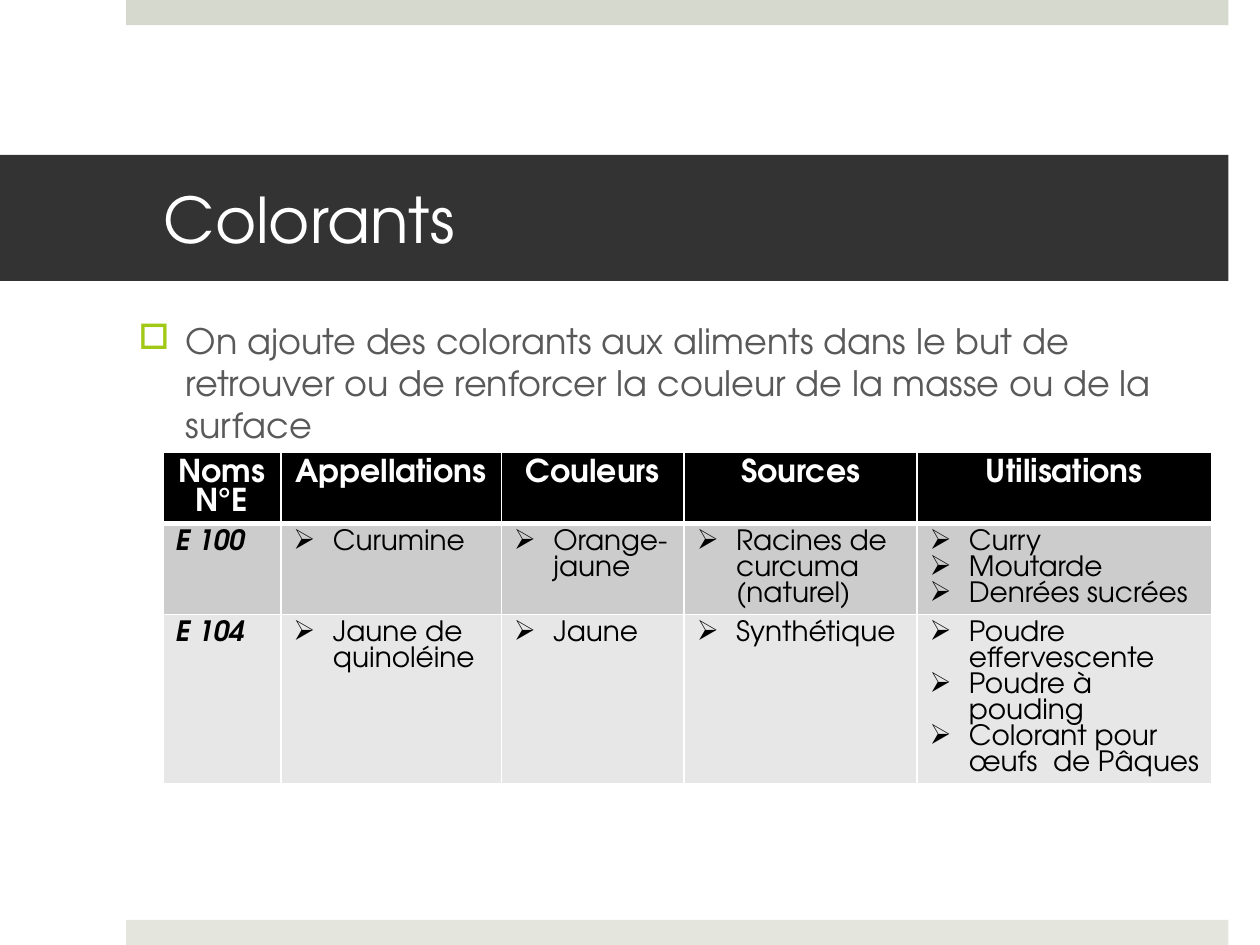
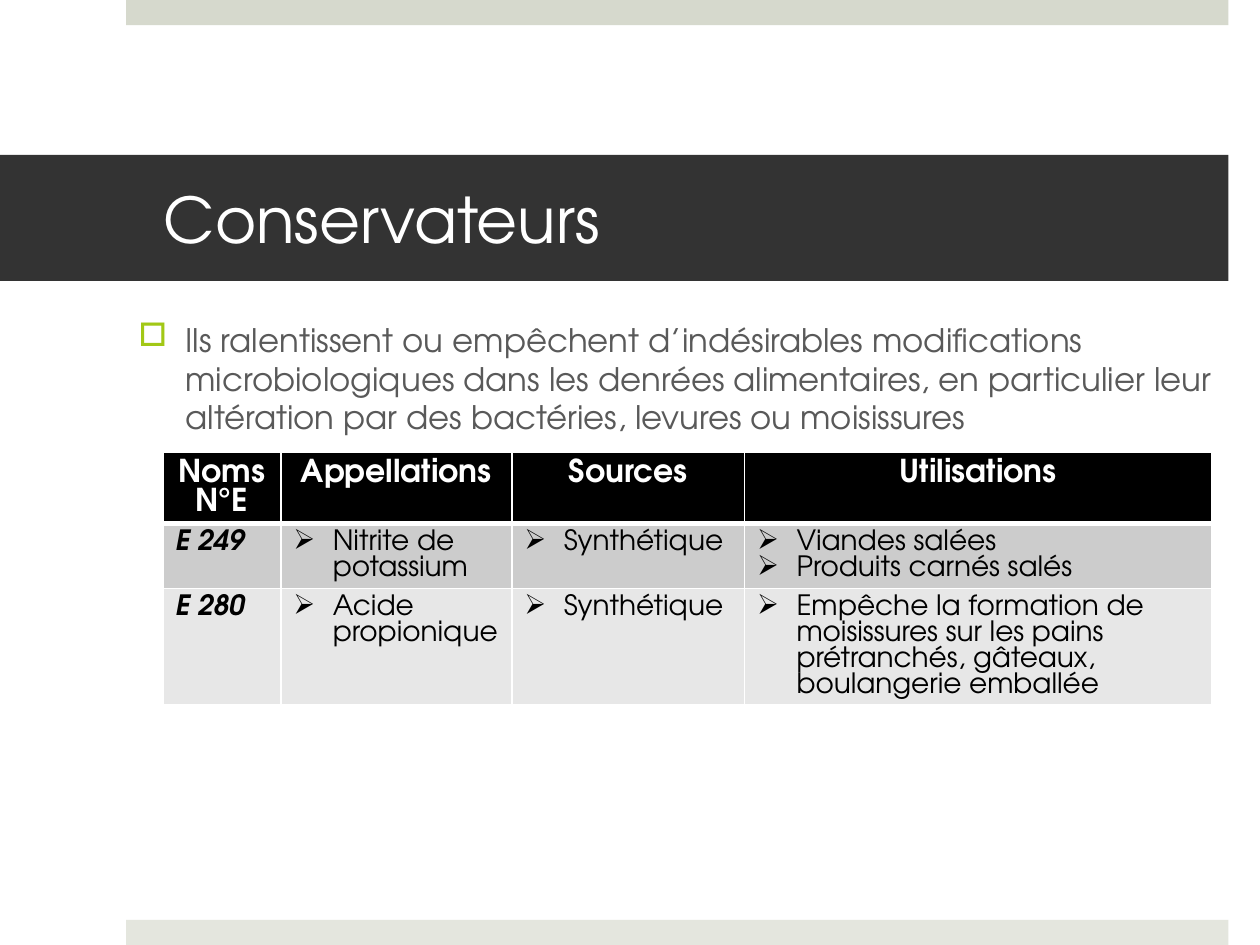
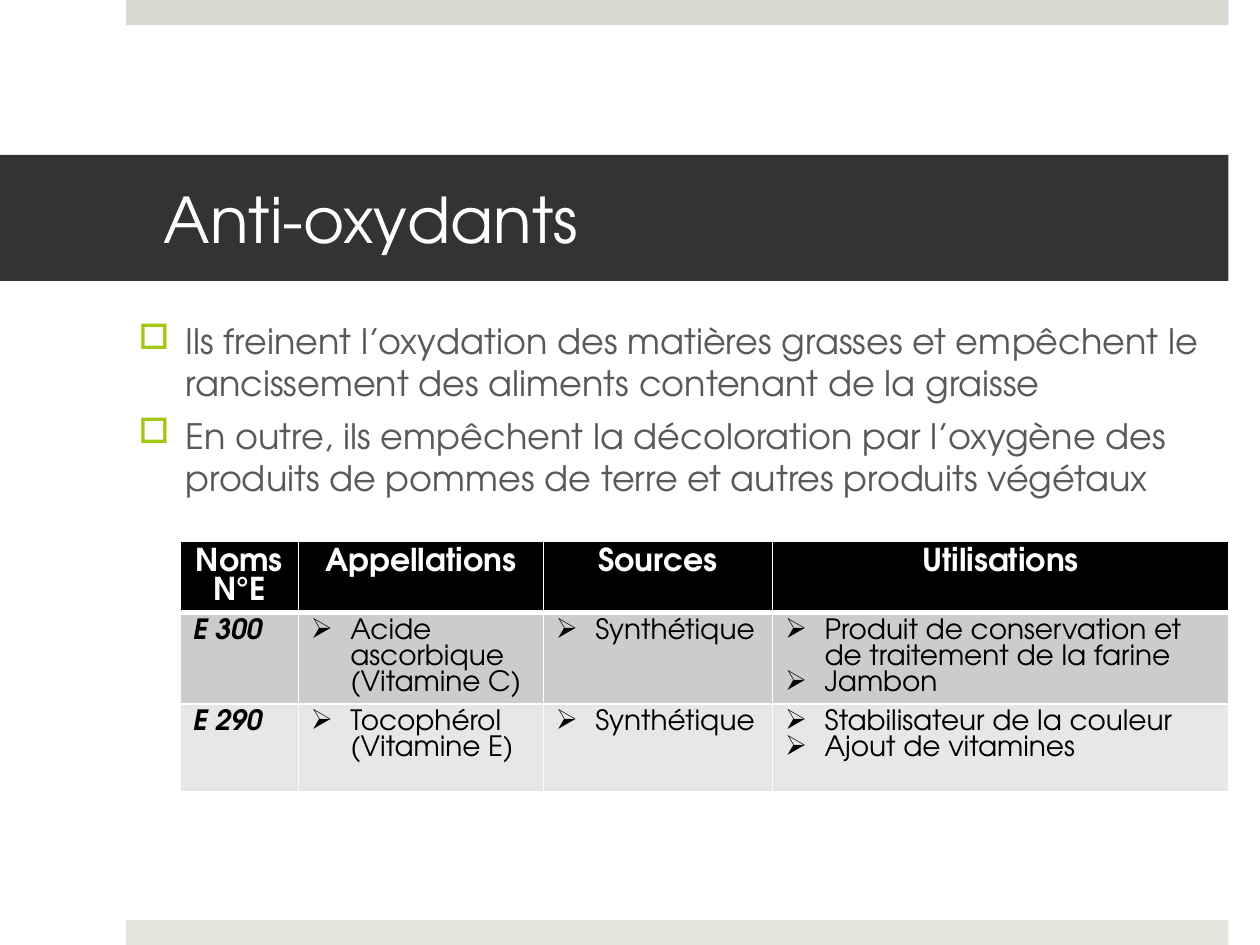
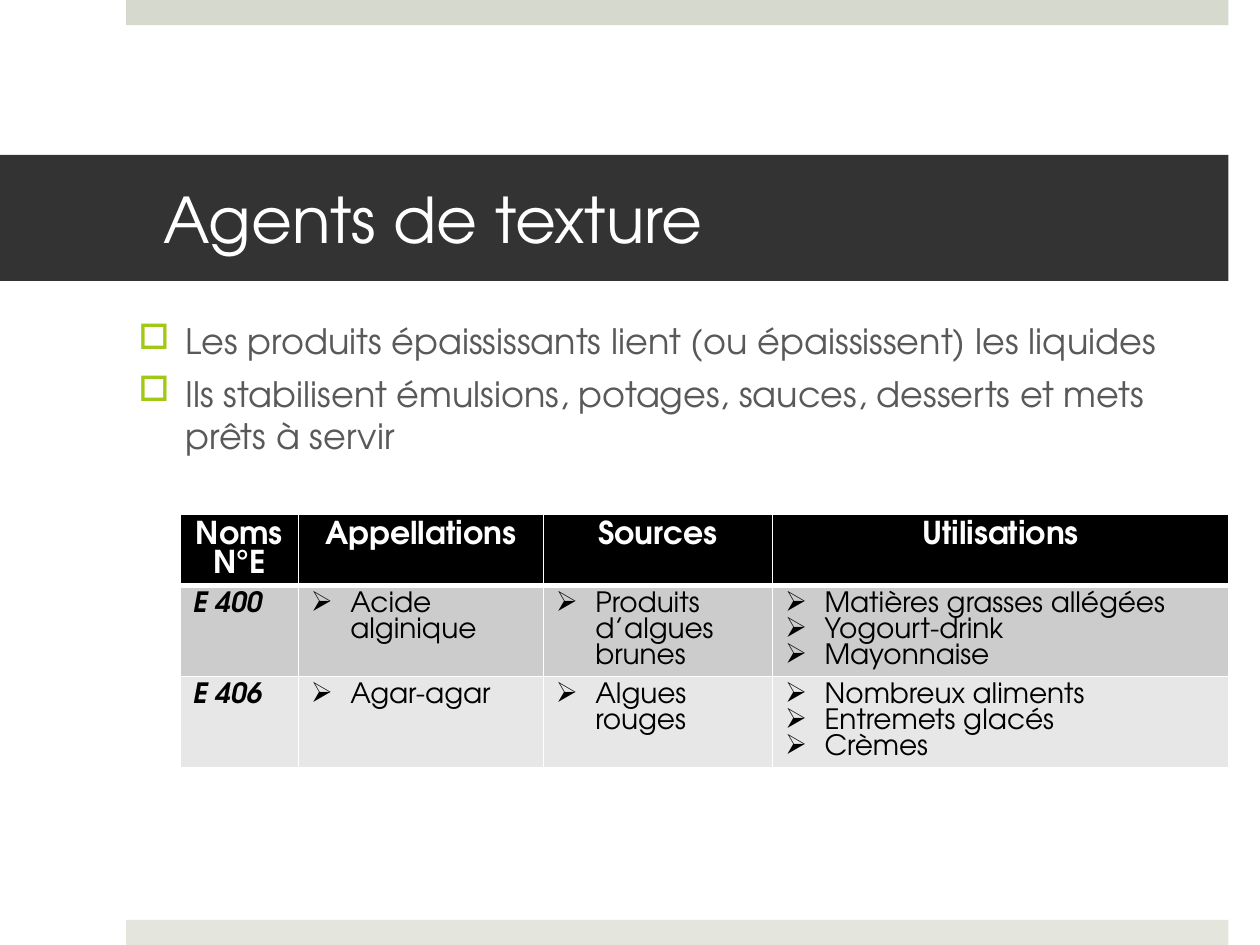
import pptx
import pptx.util
import pptx.dml.color
import pptx.enum.shapes
import pptx.enum.text
import pptx.oxml.ns
import lxml.etree

Pt = pptx.util.Pt
RGB = pptx.dml.color.RGBColor
ALIGN = pptx.enum.text.PP_ALIGN

# Shared look
FONT = "TeX Gyre Adventor"
WHITE = RGB(0xFF, 0xFF, 0xFF)
BLACK = RGB(0x00, 0x00, 0x00)
DARK = RGB(0x33, 0x33, 0x33)
GREY = RGB(0x59, 0x59, 0x59)
LIME = RGB(0xA2, 0xC8, 0x16)
SAGE = RGB(0xD6, 0xD9, 0xCD)
PALE = RGB(0xE4, 0xE6, 0xDE)
ROWS = (RGB(0xCC, 0xCC, 0xCC), RGB(0xE7, 0xE7, 0xE7))

# Line height as a share of the text size
LOOSE, TIGHT = 1.2, 0.93

# Boxes: left, top, width, height
TOP = (72, 0, 630, 14.4)
FOOT = (72, 525.6, 630, 14.4)
HEAD = (0, 88.5, 702, 72)

# Column widths
FIVE = (67.5, 126, 104.5, 133, 168.5)
FOUR = (67.5, 132, 133, 267)
WIDE = (67.5, 140, 131, 260.5)

SLIDES = [
    dict(
        title="Colorants", size=20, gap=20, body=(72, 179.3, 630, 72),
        text=["On ajoute des colorants aux aliments dans le but de retrouver "
              "ou de renforcer la couleur de la masse ou de la surface"],
        spot=(93, 258.5), cols=FIVE, rows=(39.5, 52, 96.5),
        cells=[
            ["Noms N°E", "Appellations", "Couleurs", "Sources", "Utilisations"],
            ["E 100", "Curumine", "Orange-jaune", "Racines de curcuma (naturel)",
             "Curry\nMoutarde\nDenrées sucrées"],
            ["E 104", "Jaune de quinoléine", "Jaune", "Synthétique",
             "Poudre effervescente\nPoudre à pouding\nColorant pour œufs  de Pâques"],
        ]),
    dict(
        title="Conservateurs", size=18.5, gap=20, body=(72, 179.3, 630, 72),
        text=["Ils ralentissent ou empêchent d’indésirables modifications "
              "microbiologiques dans les denrées alimentaires, en particulier "
              "leur altération par des bactéries, levures ou moisissures"],
        spot=(93, 258.5), cols=FOUR, rows=(39.5, 37, 66.5),
        cells=[
            ["Noms N°E", "Appellations", "Sources", "Utilisations"],
            ["E 249", "Nitrite de potassium", "Synthétique",
             "Viandes salées\nProduits carnés salés"],
            ["E 280", "Acide propionique", "Synthétique",
             "Empêche la formation de moisissures sur les pains prétranchés, "
             "gâteaux, boulangerie emballée"],
        ]),
    dict(
        title="Anti-oxydants", size=20, gap=6, body=(72, 179.3, 630, 130),
        text=["Ils freinent l’oxydation des matières grasses et empêchent le "
              "rancissement des aliments contenant de la graisse",
              "En outre, ils empêchent la décoloration par l’oxygène des "
              "produits de pommes de terre et autres produits végétaux"],
        spot=(103, 309.5), cols=WIDE, rows=(39.5, 52, 50.5),
        cells=[
            ["Noms N°E", "Appellations", "Sources", "Utilisations"],
            ["E 300", "Acide ascorbique (Vitamine C)", "Synthétique",
             "Produit de conservation et de traitement de la farine\nJambon"],
            ["E 290", "Tocophérol (Vitamine E)", "Synthétique",
             "Stabilisateur de la couleur\nAjout de vitamines"],
        ]),
    dict(
        title="Agents de texture", size=20, gap=6, body=(72, 179.3, 630, 130),
        text=["Les produits épaississants lient (ou épaississent) les liquides",
              "Ils stabilisent émulsions, potages, sauces, desserts et mets "
              "prêts à servir"],
        spot=(103, 294), cols=WIDE, rows=(39.5, 52, 52),
        cells=[
            ["Noms N°E", "Appellations", "Sources", "Utilisations"],
            ["E 400", "Acide alginique", "Produits d’algues brunes",
             "Matières grasses allégées\nYogourt-drink\nMayonnaise"],
            ["E 406", "Agar-agar", "Algues rouges",
             "Nombreux aliments\nEntremets glacés\nCrèmes"],
        ]),
]


def points(box):
    return [Pt(n) for n in box]


def sub(node, tag, **attrs):
    return lxml.etree.SubElement(node, pptx.oxml.ns.qn(tag), attrs)


def style(par, size, color, bold=False, slant=False, lead=None):
    if lead:
        par.line_spacing = Pt(round(size * lead, 2))
    for run in par.runs:
        font = run.font
        font.name, font.size = FONT, Pt(size)
        font.bold, font.italic = bold, slant
        font.color.rgb = color


def bullet(par, sign, indent, color=None):
    props = par._p.get_or_add_pPr()
    props.set("marL", str(Pt(indent)))
    props.set("indent", str(-Pt(indent)))
    if color is not None:
        sub(sub(props, "a:buClr"), "a:srgbClr", val=str(color))
    sub(props, "a:buChar", char=sign)


def band(slide, box, color):
    kind = pptx.enum.shapes.MSO_SHAPE.RECTANGLE
    shape = slide.shapes.add_shape(kind, *points(box))
    shape.shadow.inherit = False
    shape.fill.solid()
    shape.fill.fore_color.rgb = color
    shape.line.fill.background()
    return shape


def header(slide, box, text):
    frame = band(slide, box, DARK).text_frame
    frame.text = text
    frame.word_wrap = True
    frame.vertical_anchor = pptx.enum.text.MSO_ANCHOR.MIDDLE
    frame.margin_left, frame.margin_right = Pt(93.6), Pt(21.6)
    par = frame.paragraphs[0]
    par.alignment = ALIGN.LEFT
    style(par, 36, WHITE)


def body(slide, box, lines, size, gap):
    frame = slide.shapes.add_textbox(*points(box)).text_frame
    frame.word_wrap = True
    frame.text = "\n".join(lines)
    for par in frame.paragraphs:
        par.space_before = Pt(gap)
        style(par, size, GREY, lead=LOOSE)
        bullet(par, "□", 27, LIME)


def paint(cell, color, edges):
    # Borders come before the fill in the cell properties
    props = cell._tc.get_or_add_tcPr()
    for side, width in edges.items():
        line = sub(props, "a:ln" + side, w=str(Pt(width)))
        sub(sub(line, "a:solidFill"), "a:srgbClr", val=str(WHITE))
    cell.fill.solid()
    cell.fill.fore_color.rgb = color


def fill(cell, text, row, col):
    cell.text_frame.text = text
    if row == 0:
        paint(cell, BLACK, dict(L=1, R=1, T=1, B=3))
    else:
        paint(cell, ROWS[row - 1], dict(L=1, R=1, B=1))
    for par in cell.text_frame.paragraphs:
        if row == 0:
            par.alignment = ALIGN.CENTER
            style(par, 18, WHITE, bold=True, lead=TIGHT)
        elif col == 0:
            style(par, 16, BLACK, bold=True, slant=True, lead=TIGHT)
        else:
            style(par, 16, BLACK, lead=TIGHT)
            bullet(par, "➢", 22.5)


def grid(slide, spot, cols, rows, cells):
    box = (*spot, sum(cols), sum(rows))
    table = slide.shapes.add_table(len(rows), len(cols), *points(box)).table
    table.horz_banding = False
    for col, width in zip(table.columns, cols):
        col.width = Pt(width)
    for row, height in zip(table.rows, rows):
        row.height = Pt(height)
    for r, line in enumerate(cells):
        for c, text in enumerate(line):
            fill(table.cell(r, c), text, r, c)


def build(deck, item):
    slide = deck.slides.add_slide(deck.slide_layouts[6])
    band(slide, TOP, SAGE)
    band(slide, FOOT, PALE)
    header(slide, HEAD, item["title"])
    grid(slide, item["spot"], item["cols"], item["rows"], item["cells"])
    body(slide, item["body"], item["text"], item["size"], item["gap"])


def main():
    deck = pptx.Presentation()
    deck.slide_width, deck.slide_height = Pt(720), Pt(540)
    for item in SLIDES:
        build(deck, item)
    deck.save("out.pptx")


if __name__ == "__main__":
    main()
